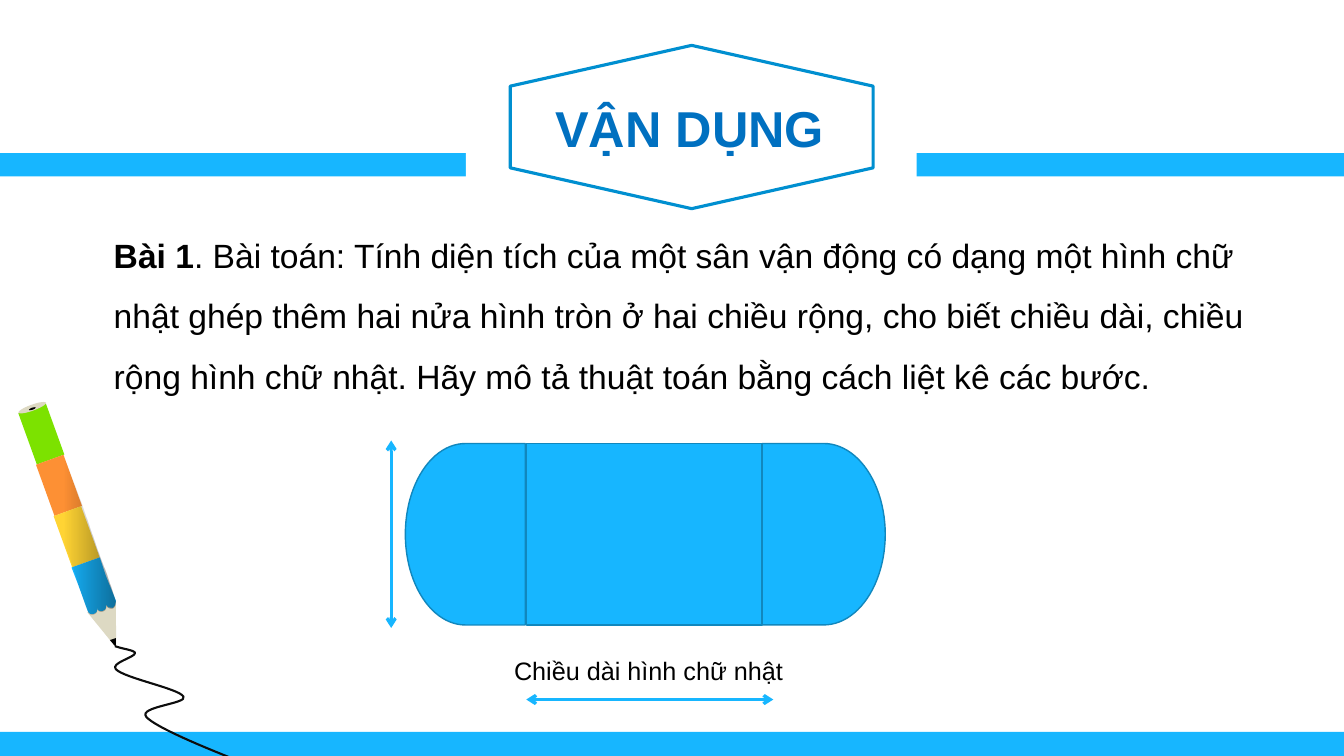
"""Build the exercise slide about the area of a stadium."""
from dataclasses import dataclass

from lxml import etree
from pptx import Presentation
from pptx.dml.color import RGBColor
from pptx.enum.shapes import MSO_CONNECTOR, MSO_SHAPE as Kind
from pptx.enum.text import MSO_AUTO_SIZE as AutoSize
from pptx.oxml.ns import qn
from pptx.util import Inches, Pt


@dataclass(frozen=True)
class Theme:
    font: str = "Arial"
    title_size: int = 36
    body_size: int = 24
    label_size: int = 18
    sky: str = "17B6FF"
    outline: str = "1187BD"
    frame: str = "008FD0"
    title: str = "0070C0"
    yellow: str = "FFD434"
    orange: str = "FD9034"
    green: str = "7CE200"
    wood: str = "DDD9C3"
    ink: str = "0D0D0D"
    black: str = "000000"
    white: str = "FFFFFF"


def paint(shape, fill=None, line=None, width=1):
    shape.shadow.inherit = False
    if fill:
        shape.fill.solid()
        shape.fill.fore_color.rgb = RGBColor.from_string(fill)
    else:
        shape.fill.background()
    if line:
        shape.line.color.rgb = RGBColor.from_string(line)
        shape.line.width = Pt(width)
    else:
        shape.line.fill.background()


def add_text(slide, runs, box, size, color=Theme.black, wrap=False, spacing=None):
    frame = slide.shapes.add_textbox(*map(Inches, box)).text_frame
    frame.word_wrap = wrap
    frame.auto_size = AutoSize.SHAPE_TO_FIT_TEXT
    paragraph = frame.paragraphs[0]
    paragraph.line_spacing = spacing
    for text, bold in runs:
        run = paragraph.add_run()
        run.text = text
        run.font.name = Theme.font
        run.font.size = Pt(size)
        run.font.bold = bold
        run.font.color.rgb = RGBColor.from_string(color)


theme = Theme()
presentation = Presentation()
presentation.slide_width = Inches(13.33)
presentation.slide_height = Inches(7.5)
slide = presentation.slides.add_slide(presentation.slide_layouts[6])

stripes = [(Kind.RECTANGLE, (0, 1.52, 13.33, 0.23), 0, theme.sky, None, 0),
           (Kind.RECTANGLE, (0, 7.26, 13.33, 0.24), 0, theme.sky, None, 0)]
badge = [(Kind.HEXAGON, (5.85, -0.97, 2.01, 4.47), 90, theme.white, None, 0),
         (Kind.HEXAGON, (6.05, -0.54, 1.62, 3.6), 90, theme.white, theme.frame, 2.25)]
pencil_bands = [
    (Kind.RECTANGLE, (0.14 + 0.175 * i, 4.16 + 0.51 * i, 0.54, 0.29), 70.1, color, None, 0)
    for i, color in enumerate((theme.green, theme.orange, theme.yellow))]
pencil_ends = [
    (Kind.ISOSCELES_TRIANGLE, (0.93, 6.01, 0.3, 0.43), 160.1, theme.wood, None, 0),
    (Kind.OVAL, (0.29, 3.9, 0.06, 0.29), 70.1, theme.wood, None, 0),
    (Kind.OVAL, (0.31, 4.02, 0.02, 0.07), 70.1, theme.black, None, 0)]
stadium = [
    (Kind.FLOWCHART_DELAY, (7.56, 4.4, 1.22, 1.8), 0, theme.sky, theme.outline, 1),
    (Kind.FLOWCHART_DELAY, (4.02, 4.4, 1.19, 1.8), 180, theme.sky, theme.outline, 1),
    (Kind.RECTANGLE, (5.22, 4.4, 2.34, 1.8), 0, theme.sky, theme.outline, 1)]

for kind, box, rotation, fill, line, width in (
        stripes + badge + pencil_bands + pencil_ends + stadium):
    shape = slide.shapes.add_shape(kind, *map(Inches, box))
    shape.rotation = rotation
    paint(shape, fill, line, width)

scallops = [(0.78, 5.81), (0.87, 6.06),
            (0.88, 6.09, 0.91, 6.1, 0.93, 6.09), (0.96, 6.08, 0.97, 6.06, 0.96, 6.03),
            (0.97, 6.06, 1, 6.07, 1.02, 6.06), (1.05, 6.05, 1.06, 6.02, 1.05, 6),
            (1.06, 6.02, 1.09, 6.04, 1.12, 6.03), (1.14, 6.02, 1.15, 5.99, 1.15, 5.96)]
grip = [(1.05, 5.71), (0.99, 5.53), (0.71, 5.63), *scallops]
lead = [(1.15, 6.33), (1.09, 6.35), (1.15, 6.42)]
shade = [(0.62, 4.48), (0.44, 3.97), (0.16, 4.07), (0.35, 4.58), (0.53, 5.09),
         (0.72, 5.61), *scallops, (1.06, 5.69), (0.99, 5.51), (0.81, 4.99)]
scribble = [(1.14, 6.41), (1.22, 6.44, 1.34, 6.45, 1.34, 6.48),
            (1.34, 6.52, 1.09, 6.58, 1.15, 6.64), (1.24, 6.73, 1.77, 6.83, 1.82, 6.91),
            (1.87, 6.98, 1.37, 7.01, 1.45, 7.11), (1.53, 7.21, 2.04, 7.42, 2.32, 7.53)]

for outline, fill, line, width in ((grip, theme.sky, None, 0),
                                   (lead, theme.black, None, 0),
                                   (shade, theme.black, None, 0),
                                   (scribble, None, theme.ink, 1.5)):
    corners = [(Inches(segment[i]), Inches(segment[i + 1]))
               for segment in outline for i in range(0, len(segment), 2)]
    builder = slide.shapes.build_freeform(*corners[0])
    builder.add_line_segments(corners[1:], close=fill is not None)
    shape = builder.convert_to_shape()
    paint(shape, fill, line, width)
    steps = iter(list(shape.element.spPr.iter(qn("a:lnTo"))))
    for segment in outline[1:]:
        first = next(steps)
        if len(segment) == 6:
            curve = etree.Element(qn("a:cubicBezTo"))
            first.addprevious(curve)
            for step in (first, next(steps), next(steps)):
                curve.append(step[0])
                step.getparent().remove(step)
    if outline is shade:
        shape.fill.gradient()
        shape.fill.gradient_angle = 0
        for stop, position in zip(shape.fill.gradient_stops, (0.48, 1)):
            stop.position = position
            stop.color.rgb = RGBColor.from_string(fill)
        for color, alpha in zip(shape.element.spPr.iter(qn("a:srgbClr")), (0, 39000)):
            etree.SubElement(color, qn("a:alpha"), val=str(alpha))

add_text(slide, [("VẬN DỤNG", True)], (5.41, 0.91, 2.89, 0.71),
         theme.title_size, color=theme.title)
add_text(slide, [("Bài 1", True),
                 (". Bài toán: Tính diện tích của một sân vận động có dạng một hình chữ "
                  "nhật ghép thêm hai nửa hình tròn ở hai chiều rộng, cho biết chiều dài, "
                  "chiều rộng hình chữ nhật. Hãy mô tả thuật toán bằng cách liệt kê các "
                  "bước.", False)],
         (1.03, 2.08, 11.44, 1.92), theme.body_size, wrap=True, spacing=1.5)
add_text(slide, [("Chiều dài hình chữ nhật", False)], (5, 6.45, 2.89, 0.4),
         theme.label_size)

for ends in ((3.88, 4.37, 3.88, 6.23), (7.67, 6.94, 5.22, 6.94)):
    arrow = slide.shapes.add_connector(MSO_CONNECTOR.STRAIGHT, *map(Inches, ends))
    arrow.line.color.rgb = RGBColor.from_string(theme.sky)
    arrow.line.width = Pt(2.25)
    stroke = arrow.element.spPr.find(qn("a:ln"))
    for end in ("a:headEnd", "a:tailEnd"):
        etree.SubElement(stroke, qn(end), type="arrow")
    etree.SubElement(arrow.element.spPr, qn("a:effectLst"))

presentation.save("out.pptx")
